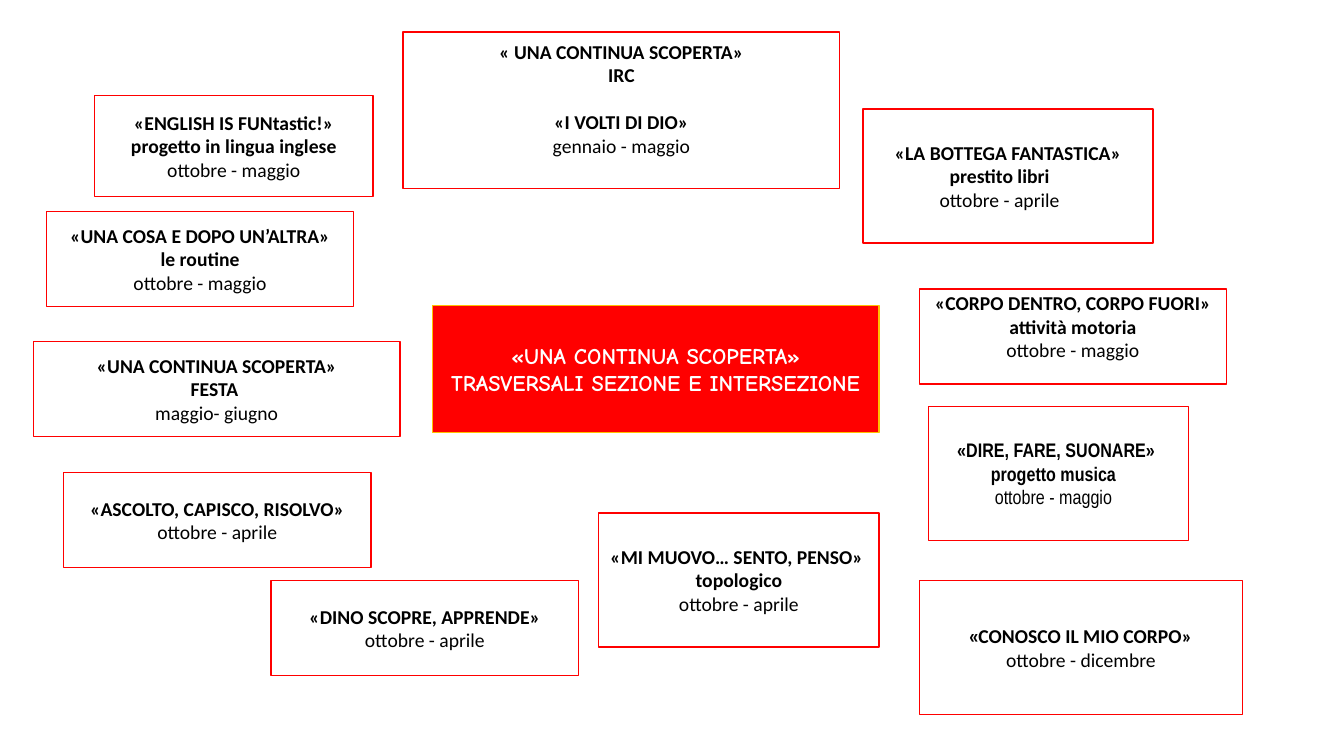
from pptx import Presentation
from pptx.dml.color import RGBColor
from pptx.enum.shapes import MSO_SHAPE
from pptx.enum.text import MSO_ANCHOR, PP_ALIGN
from pptx.util import Pt


def color(value):
    return RGBColor.from_string(value)


def add_span(para, text, font="Calibri", size=14, ink="000000", bold=True):
    span = para.add_run()
    span.text = text
    span.font.name = font
    span.font.size = Pt(size)
    span.font.bold = bold
    span.font.color.rgb = color(ink)


class ProjectMap:
    def __init__(self, page, outline="FF0000", fill="FFFFFF"):
        self.page = page
        self.outline = outline
        self.fill = fill

    def box(self, left, top, width, height, fill=None, outline=None, inset_top=3.6, inset_bottom=3.6):
        box = self.page.shapes.add_shape(
            MSO_SHAPE.RECTANGLE, Pt(left), Pt(top), Pt(width), Pt(height))
        box.shadow.inherit = False
        box.fill.solid()
        box.fill.fore_color.rgb = color(fill or self.fill)
        box.line.color.rgb = color(outline or self.outline)
        box.line.width = Pt(1)
        frame = box.text_frame
        frame.word_wrap = True
        frame.vertical_anchor = MSO_ANCHOR.MIDDLE
        frame.margin_left = frame.margin_right = Pt(7.2)
        frame.margin_top = Pt(inset_top)
        frame.margin_bottom = Pt(inset_bottom)
        return frame

    def line(self, frame, text, gap=0, right_indent=0, **style):
        first = frame.paragraphs[0]
        para = frame.add_paragraph() if first.runs else first
        para.alignment = PP_ALIGN.CENTER
        para.space_before = Pt(gap)
        if right_indent:
            para._p.get_or_add_pPr().set("marR", str(Pt(right_indent)))
        add_span(para, text, **style)
        return para

    def project(self, place, title, subject, period, font="Calibri", right_indent=0):
        frame = self.box(*place)
        self.line(frame, title, font=font)
        if subject:
            self.line(frame, subject, font=font, right_indent=right_indent)
        self.line(frame, period, font=font, bold=False)

    def theme(self, place, lines):
        frame = self.box(*place, fill="FF0000", outline="FFC000")
        for text in lines:
            self.line(frame, text, font="Comic Neue", size=16, ink="FFFFFF")

    def religion(self, place):
        frame = self.box(*place, inset_bottom=20.6)
        self.line(frame, "« UNA CONTINUA SCOPERTA»")
        self.line(frame, "IRC")
        self.line(frame, "«I VOLTI DI DIO»", gap=17)
        self.line(frame, "gennaio - maggio", bold=False)

    def movement(self, place):
        frame = self.box(*place, inset_top=0, inset_bottom=14.6)
        self.line(frame, "«CORPO DENTRO, CORPO FUORI»")
        self.line(frame, "attività motoria")
        self.line(frame, "ottobre - maggio", bold=False)

    def body(self, place):
        frame = self.box(*place)
        title = self.line(frame, "«", font="Arial Narrow")
        add_span(title, "CONOSCO IL MIO CORPO»")
        self.line(frame, "ottobre - dicembre", bold=False)


PROJECTS = [
    ((193.7, 414.7, 219.6, 67.7), "«DINO SCOPRE, APPRENDE»", None, "ottobre - aprile"),
    ((45.4, 337.7, 219.6, 67.7), "«ASCOLTO, CAPISCO, RISOLVO»", None, "ottobre - aprile"),
    ((23.8, 244.1, 262.1, 67.7), "«UNA CONTINUA SCOPERTA»", "FESTA ", "maggio- giugno"),
    ((427.7, 366.5, 200.2, 95.8), "«MI MUOVO… SENTO, PENSO» ", "topologico", "ottobre - aprile"),
    ((33.1, 151.2, 219.6, 67.7), "«UNA COSA E DOPO UN’ALTRA»", "le routine", "ottobre - maggio"),
    ((67.7, 68.4, 198.7, 72), "«ENGLISH IS FUNtastic!»", "progetto in lingua inglese",
     "ottobre - maggio"),
]


def main():
    deck = Presentation()
    deck.slide_width = Pt(960)
    deck.slide_height = Pt(540)
    project_map = ProjectMap(deck.slides.add_slide(deck.slide_layouts[6]))

    project_map.project((663.1, 290.2, 185.8, 95.8), "«DIRE, FARE, SUONARE» ",
                        "progetto musica", "ottobre - maggio",
                        font="Arial Narrow", right_indent=7)
    project_map.movement((656.6, 206.6, 219.6, 67.7))
    project_map.theme((308.9, 218.2, 319, 90.7),
                      ["«UNA CONTINUA SCOPERTA»", "TRASVERSALI SEZIONE E INTERSEZIONE"])
    project_map.religion((288, 23, 311.8, 111.6))
    project_map.project((616.3, 77.8, 207.4, 95.8), "«LA BOTTEGA FANTASTICA»",
                        "prestito libri", "ottobre - aprile", right_indent=12)
    for project in PROJECTS:
        project_map.project(*project)
    project_map.body((656.6, 414.7, 231.1, 95.8))

    deck.save("out.pptx")


if __name__ == "__main__":
    main()
